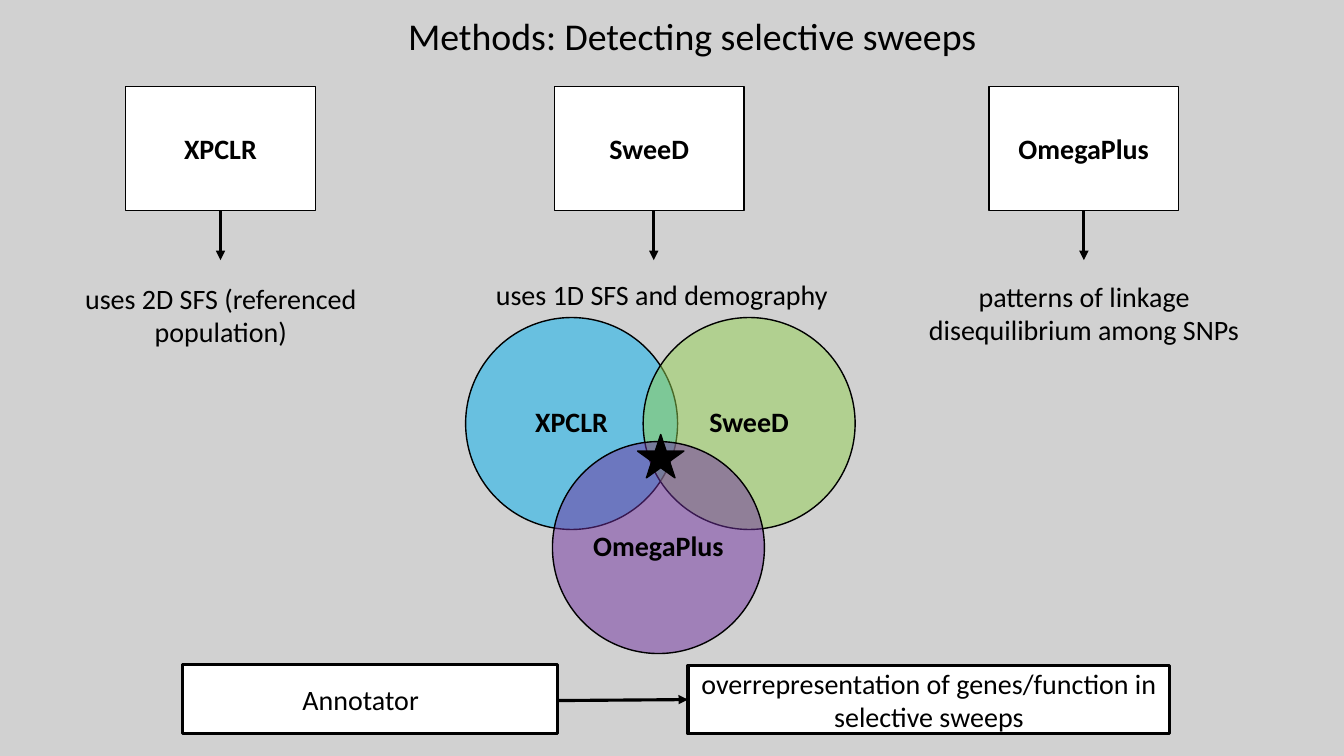
from lxml.etree import SubElement
from pptx import Presentation
from pptx.dml.color import RGBColor
from pptx.enum.shapes import MSO_CONNECTOR as Connector, MSO_SHAPE as Shape
from pptx.enum.text import MSO_ANCHOR as Anchor, PP_ALIGN as Align
from pptx.oxml.ns import qn
from pptx.util import Pt

COLORS = {
    "background": "D1D1D1", "black": "000000", "white": "FFFFFF",
    "blue": "00B0F0", "green": "92D050", "purple": "7030A0",
}
FONT = "Calibri"
BODY_SIZE, TITLE_SIZE = 20, 27
THIN, THICK = 1, 2.25

TITLE = ("Methods: Detecting selective sweeps", (284.4, 5.4, 432, 40.3))
METHODS = [
    ("XPCLR", 89.8, 157.5),
    ("SweeD", 396, 467),
    ("OmegaPlus", 706.4, 774.2),
]
METHOD_TOP, METHOD_WIDTH, METHOD_HEIGHT = 61.9, 135.4, 88.6
ARROW_LENGTH = 35.3
DESCRIPTIONS = [
    ("uses 2D SFS (referenced population)", (45.4, 197.3, 224.6, 55.4)),
    ("uses 1D SFS and demography", (336, 194.4, 273.6, 31.7)),
    ("patterns of linkage disequilibrium among SNPs", (647.3, 195.8, 254.2, 55.4)),
]
VENN = [
    ("XPCLR", "blue", 332.6, 226.8),
    ("SweeD", "green", 459.4, 226.8),
    ("OmegaPlus", "purple", 394.6, 315.4),
]
VENN_DIAMETER = 151.4
VENN_LINE_SPACING = 0.9
STAR = (455.4, 310.4, 33.1, 31)
TOOL = ("Annotator", (130.3, 474.8, 267.8, 49))
TOOL_INDENT = 85.7
RESULT = ("overrepresentation of genes/function in selective sweeps", (491.4, 475.2, 344.2, 49))
RESULT_ARROW = (398.5, 500.4, 491.4, 499.7)


def color(name):
    return RGBColor.from_string(COLORS[name])


def write(shape, text, size=BODY_SIZE, bold=False, align=Align.CENTER):
    shape.text_frame.word_wrap = True
    para = shape.text_frame.paragraphs[0]
    para.alignment = align
    span = para.add_run()
    span.text = text
    span.font.name = FONT
    span.font.size = Pt(size)
    span.font.bold = bold
    span.font.color.rgb = color("black")


def add_shape(kind, place, fill, weight=THIN):
    shape = page.shapes.add_shape(kind, *map(Pt, place))
    shape.shadow.inherit = False
    shape.fill.solid()
    shape.fill.fore_color.rgb = color(fill)
    shape.line.color.rgb = color("black")
    shape.line.width = Pt(weight)
    frame = shape.text_frame
    frame.vertical_anchor = Anchor.MIDDLE
    frame.margin_top = frame.margin_bottom = 0
    return shape


def add_text(text, place, **style):
    write(page.shapes.add_textbox(*map(Pt, place)), text, **style)


def add_arrow(*ends):
    arrow = page.shapes.add_connector(Connector.STRAIGHT, *map(Pt, ends))
    arrow.line.color.rgb = color("black")
    arrow.line.width = Pt(THICK)
    SubElement(arrow.line._get_or_add_ln(), qn("a:tailEnd"), type="triangle")
    SubElement(arrow._element.spPr, qn("a:effectLst"))


def make_translucent(shape, percent):
    tint = next(shape._element.spPr.iter(qn("a:srgbClr")))
    SubElement(tint, qn("a:alpha"), val=str(percent * 1000))


deck = Presentation()
deck.slide_width, deck.slide_height = Pt(960), Pt(540)
page = deck.slides.add_slide(deck.slide_layouts[6])
page.background.fill.solid()
page.background.fill.fore_color.rgb = color("background")

add_text(*TITLE, size=TITLE_SIZE, align=Align.LEFT)

method_bottom = METHOD_TOP + METHOD_HEIGHT
for name, left, arrow_x in METHODS:
    box = add_shape(Shape.RECTANGLE, (left, METHOD_TOP, METHOD_WIDTH, METHOD_HEIGHT), "white")
    write(box, name, bold=True)
    add_arrow(arrow_x, method_bottom, arrow_x, method_bottom + ARROW_LENGTH)
for text, place in DESCRIPTIONS:
    add_text(text, place)

tool_name, tool_place = TOOL
tool_box = add_shape(Shape.RECTANGLE, tool_place, "white", THICK)
tool_box.text_frame.margin_left = Pt(TOOL_INDENT)
write(tool_box, tool_name, align=Align.LEFT)

result_text, result_place = RESULT
write(add_shape(Shape.RECTANGLE, result_place, "white", THICK), result_text)
add_arrow(*RESULT_ARROW)

for name, fill, left, top in VENN:
    circle = add_shape(Shape.OVAL, (left, top, VENN_DIAMETER, VENN_DIAMETER), fill)
    make_translucent(circle, 50)
    circle.text_frame.margin_left = circle.text_frame.margin_right = 0
    write(circle, name, bold=True)
    circle.text_frame.paragraphs[0].line_spacing = VENN_LINE_SPACING
add_shape(Shape.STAR_5_POINT, STAR, "black")

deck.save("out.pptx")
